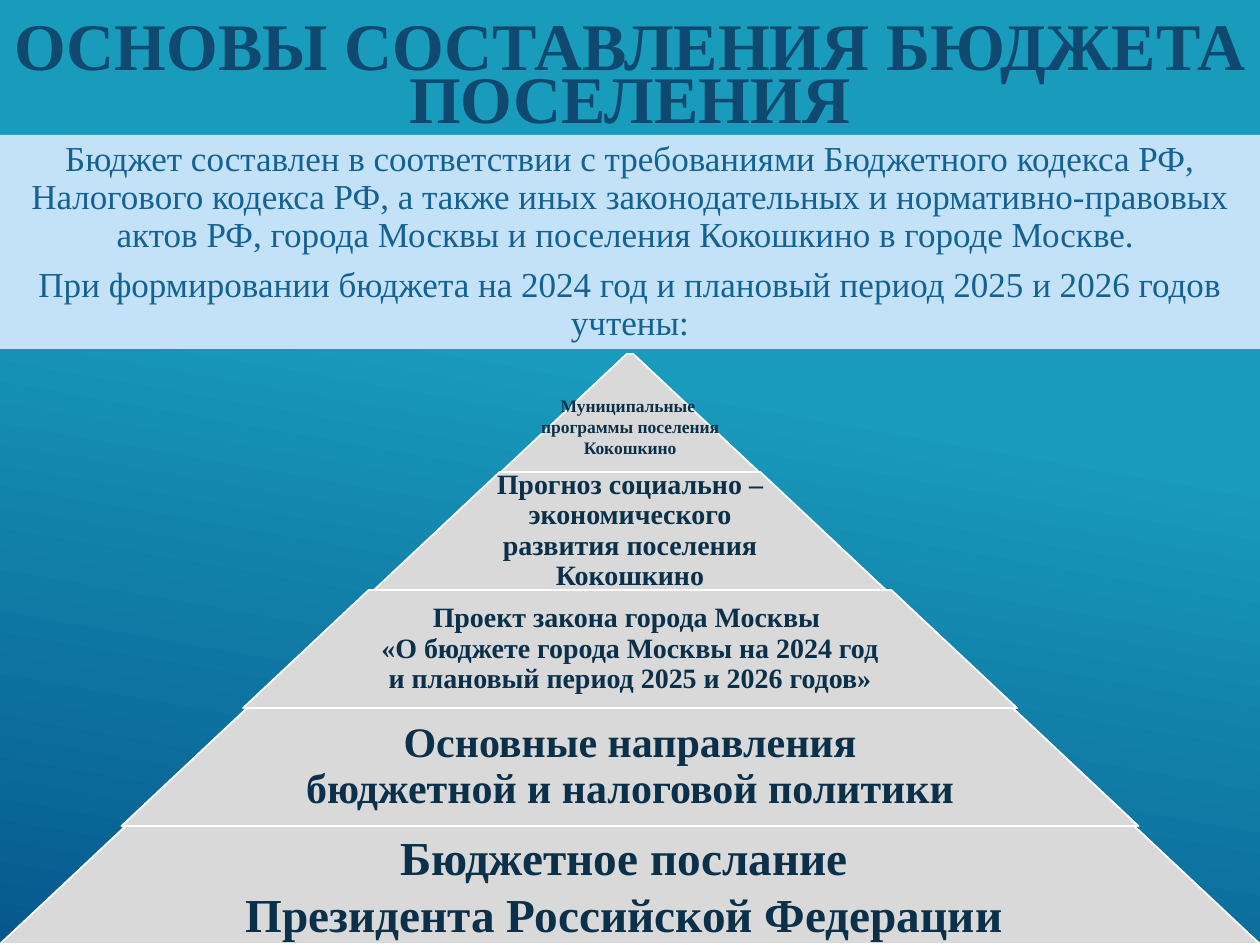
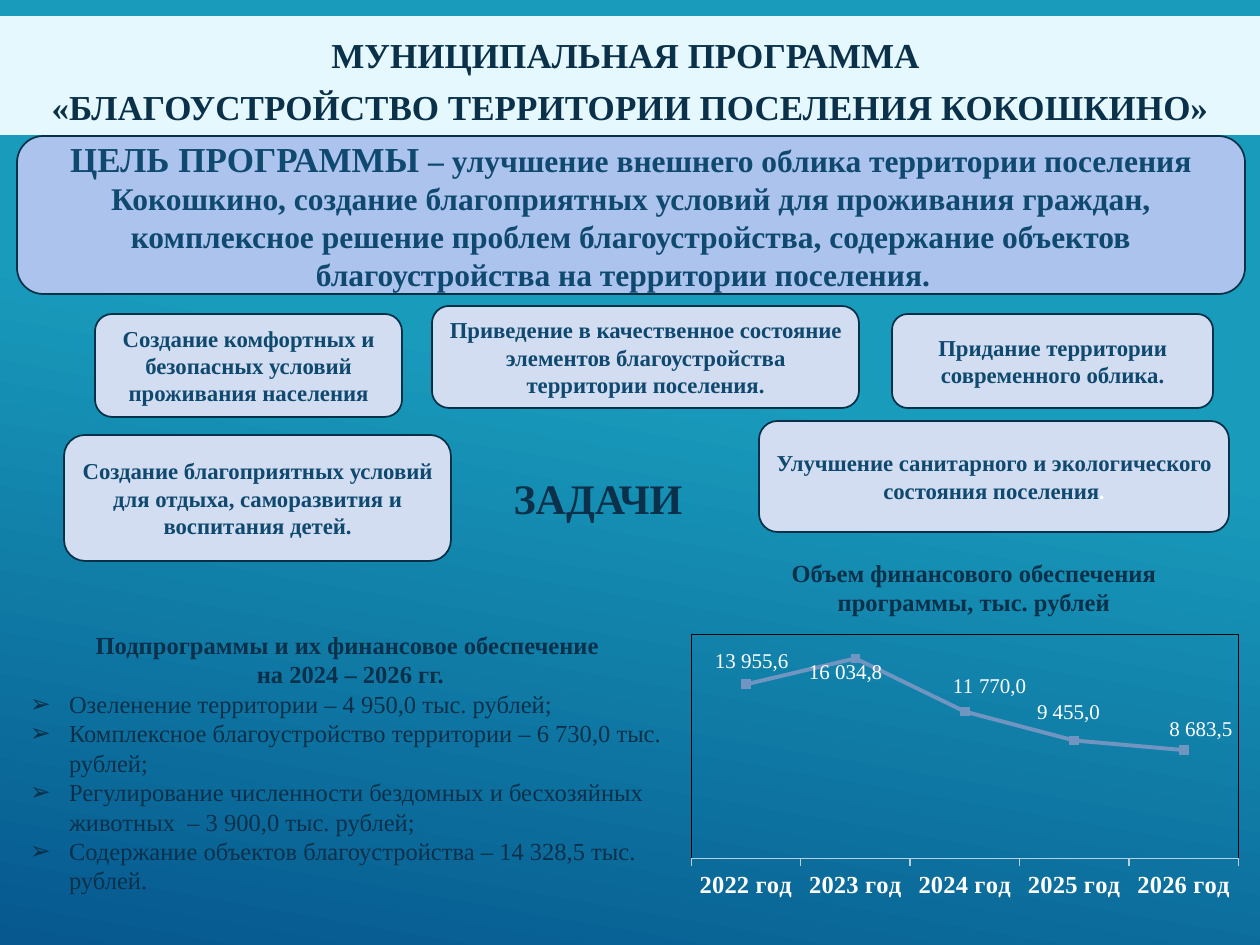
"""Build two slides on the budget of a settlement: its basis and one programme."""
import pptx
import pptx.chart.data
import pptx.dml.color
import pptx.enum.chart
import pptx.enum.shapes
import pptx.enum.text
import pptx.oxml
import pptx.oxml.ns
import pptx.util

FONT = "Times New Roman"
SKY, DEEP, NAVY, INK, WHITE = "199BBC", "06588E", "0A304A", "0F496F", "FFFFFF"
OUTLINE, CARD, SERIES = "043148", "D3DDF1", "7195C1"
PAGE_W, PAGE_H = 1260, 945
TITLE_TOP = 16
SNUG = (12, 6, 12, 6)

BASIS_TITLE = "ОСНОВЫ СОСТАВЛЕНИЯ БЮДЖЕТА\nПОСЕЛЕНИЯ"
INTRO = [
    "Бюджет составлен в соответствии с требованиями Бюджетного кодекса РФ, Налогового кодекса РФ, "
    "а также иных законодательных и нормативно-правовых актов РФ, города Москвы и поселения "
    "Кокошкино в городе Москве. ",
    "При формировании бюджета на 2024 год и плановый период 2025 и 2026 годов учтены:",
]
TIER_TOP, TIER_STEP = 354, 118
TIERS = [
    {"width": 258, "text_width": 258, "size": 10, "spacing": 1, "drop": 27,
     "text": ["Муниципальные ", "программы поселения Кокошкино"]},
    {"width": 512, "text_width": 318, "size": 16, "spacing": 0.9, "drop": 0,
     "text": ["Прогноз социально – экономического развития поселения Кокошкино"]},
    {"width": 774, "text_width": 503, "size": 16, "spacing": 0.9, "drop": 0,
     "text": ["Проект закона города Москвы ",
              "«О бюджете города Москвы на 2024 год и плановый период 2025 и 2026 годов»"]},
    {"width": 1017, "text_width": 662, "size": 24, "spacing": 0.9, "drop": 0,
     "text": ["Основные направления бюджетной и налоговой политики"]},
    {"width": 1260, "text_width": 819, "size": 27, "spacing": 1, "drop": 0,
     "text": ["Бюджетное послание ", "Президента Российской Федерации "]},
]

PROGRAMME_TITLE = ("МУНИЦИПАЛЬНАЯ ПРОГРАММА \n"
                   "«БЛАГОУСТРОЙСТВО ТЕРРИТОРИИ ПОСЕЛЕНИЯ КОКОШКИНО»")
GOAL = [
    ("ЦЕЛЬ ПРОГРАММЫ ", {"size": 20}),
    ("– улучшение внешнего облика территории поселения Кокошкино, создание благоприятных условий "
     "для проживания граждан, комплексное решение проблем благоустройства, содержание объектов "
     "благоустройства на территории поселения.  ", {}),
]
TASKS = [
    ((95, 314, 307, 103), "Создание комфортных и безопасных условий проживания населения"),
    ((892, 314, 321, 94), "Придание территории современного облика."),
    ((759, 421, 470, 111), [("Улучшение санитарного и экологического состояния поселения", {}),
                            (".", {"color": WHITE})]),
    ((64, 435, 387, 126), "Создание благоприятных условий для отдыха, саморазвития и воспитания детей."),
    ((432, 306, 427, 102), "Приведение в качественное состояние элементов благоустройства "
                           "территории поселения."),
]
TASKS_LABEL = "ЗАДАЧИ"
SUBPROGRAMME_HEAD = ["Подпрограммы и их финансовое обеспечение ", "на 2024 – 2026 гг."]
SUBPROGRAMMES = [
    "Озеленение территории – 4 950,0 тыс. рублей;",
    "Комплексное благоустройство территории – 6 730,0 тыс. рублей;",
    "Регулирование численности бездомных и бесхозяйных животных  – 3 900,0 тыс. рублей;",
    "Содержание объектов благоустройства – 14 328,5 тыс. рублей.",
]
CHART_TITLE = "Объем финансового обеспечения программы, тыс. рублей"
CHART_PLACE = (670, 564, 576, 364)
FUNDING = [
    ("2022 год", 13955.6, "13 955,6", "ABOVE", (6, -3)),
    ("2023 год", 16034.8, "16 034,8", "BELOW", (-10, -7)),
    ("2024 год", 11770, "11 770,0", "ABOVE", (25, -5)),
    ("2025 год", 9455, "9 455,0", "ABOVE", (-6, -8)),
    ("2026 год", 8683.5, "8 683,5", "ABOVE", (17, 0)),
]


def px(length):
    return pptx.util.Emu(round(length * 914400 / 126))


def rgb(color):
    return pptx.dml.color.RGBColor.from_string(color)


def style_font(font, size, color, bold):
    font.name, font.size, font.bold = FONT, pptx.util.Pt(size), bold
    font.color.rgb = rgb(color)


def write(frame, text, size=14, color=NAVY, bold=True, centred=True, spacing=1, after=0,
          bullet=None, more=False):
    """Put paragraphs, each a string or a list of (text, overrides), into a frame."""
    for index, content in enumerate(text):
        para = frame.add_paragraph() if more or index else frame.paragraphs[0]
        para.alignment = pptx.enum.text.PP_ALIGN.CENTER if centred else pptx.enum.text.PP_ALIGN.LEFT
        para.line_spacing = spacing
        para.space_before = pptx.util.Pt(0)
        para.space_after = pptx.util.Pt(after)
        set_bullet(para, bullet)
        spans = [(content, {})] if isinstance(content, str) else content
        for words, changes in spans:
            for number, line in enumerate(words.split("\n")):
                if number:
                    para.add_line_break()
                span = para.add_run()
                span.text = line
                style_font(span.font, **{"size": size, "color": color, "bold": bold, **changes})


def set_bullet(para, bullet):
    properties = para._p.get_or_add_pPr()
    indent = px(39) if bullet else 0
    properties.set("marL", str(indent))
    properties.set("indent", str(-indent))
    tag = f'buChar char="{bullet}"' if bullet else "buNone"
    properties.append(pptx.oxml.parse_xml(f'<a:{tag} {pptx.oxml.ns.nsdecls("a")}/>'))


def prepare_frame(box, anchor="MIDDLE", inset=(13, 6, 13, 6)):
    frame = box.text_frame
    frame.word_wrap = True
    frame.auto_size = pptx.enum.text.MSO_AUTO_SIZE.NONE
    frame.vertical_anchor = pptx.enum.text.MSO_ANCHOR[anchor]
    frame.margin_left, frame.margin_top, frame.margin_right, frame.margin_bottom = map(px, inset)
    return frame


def move(box, place):
    box.left, box.top, box.width, box.height = map(px, place)


def paint(box, fill):
    box.fill.solid()
    box.fill.fore_color.rgb = rgb(fill)


def add_text(page, place, text, anchor="MIDDLE", inset=(13, 6, 13, 6), **style):
    box = page.shapes.add_textbox(*map(px, place))
    write(prepare_frame(box, anchor, inset), text, **style)
    return box


def add_panel(page, kind, place, fill, line):
    box = page.shapes.add_shape(pptx.enum.shapes.MSO_SHAPE[kind], *map(px, place))
    box.shadow.inherit = False
    paint(box, fill)
    box.line.color.rgb = rgb(line)
    box.line.width = pptx.util.Pt(1)
    return box


def add_page(deck, layout, title, height, **style):
    page = deck.slides.add_slide(deck.slide_layouts[layout])
    fill = page.background.fill
    fill.gradient()
    fill.gradient_angle = 260
    for stop, (position, color) in zip(fill.gradient_stops, [(0.41, SKY), (1, DEEP)]):
        stop.position = position
        stop.color.rgb = rgb(color)
    move(page.shapes.title, (0, TITLE_TOP, PAGE_W, height))
    frame = prepare_frame(page.shapes.title, inset=(0, 6, 0, 6))
    write(frame, [title], spacing=pptx.util.Pt(30), **style)
    return page


def build_basis(deck):
    page = add_page(deck, 5, BASIS_TITLE, 136, size=38, color=INK)
    intro = add_text(page, (0, 135, PAGE_W, 214), INTRO, inset=(10,) * 4, size=20,
                     color="146194", bold=False, spacing=0.9, after=7)
    paint(intro, "C3E2F7")
    for index, tier in enumerate(TIERS):
        top = TIER_TOP + index * TIER_STEP
        left = (PAGE_W - tier["width"]) / 2
        box = add_panel(page, "TRAPEZOID", (left, top, tier["width"], TIER_STEP), "D9D9D9", WHITE)
        box.adjustments[0] = 1.065
        text_left = (PAGE_W - tier["text_width"]) / 2
        add_text(page, (text_left, top, tier["text_width"], TIER_STEP), tier["text"],
                 inset=(3, 3 + tier["drop"], 3, 3), size=tier["size"], spacing=tier["spacing"])


def manual_layout(x, y, size=""):
    mode = '<c:xMode val="edge"/><c:yMode val="edge"/>' if size else ""
    target = '<c:layoutTarget val="inner"/>' if size else ""
    return pptx.oxml.parse_xml(
        f'<c:layout {pptx.oxml.ns.nsdecls("c")}><c:manualLayout>{target}{mode}'
        f'<c:x val="{x:.3f}"/><c:y val="{y:.3f}"/>{size}</c:manualLayout></c:layout>')


def add_funding_chart(page):
    data = pptx.chart.data.CategoryChartData(number_format="0.0")
    data.categories = [row[0] for row in FUNDING]
    data.add_series("Series 1", [row[1] for row in FUNDING])
    kind = pptx.enum.chart.XL_CHART_TYPE.LINE_MARKERS
    chart = page.shapes.add_chart(kind, *map(px, CHART_PLACE), data).chart
    chart.has_legend = chart.has_title = False
    style_font(chart.font, 12, WHITE, False)

    values, years = chart.value_axis, chart.category_axis
    values.visible = values.has_major_gridlines = False
    values.minimum_scale, values.maximum_scale = 0, 18000
    years.major_tick_mark = pptx.enum.chart.XL_TICK_MARK.OUTSIDE
    years.format.line.color.rgb = rgb("B8D0E0")
    style_font(years.tick_labels.font, 14, WHITE, True)

    plot = chart.plots[0]
    plot.vary_by_categories = False
    series = plot.series[0]
    series.smooth = False
    series.format.line.color.rgb = rgb(SERIES)
    series.format.line.width = pptx.util.Pt(2.25)
    series.marker.style = pptx.enum.chart.XL_MARKER_STYLE.SQUARE
    series.marker.size = 5
    paint(series.marker.format, SERIES)
    series.marker.format.line.color.rgb = rgb(SERIES)

    labels = series.data_labels
    labels.show_value = True
    labels.number_format, labels.number_format_is_linked = "0.0", False
    for index, (_, _, caption, side, (dx, dy)) in enumerate(FUNDING):
        label = series.points[index].data_label
        write(label.text_frame, [caption], size=12, color=WHITE, bold=False)
        label.position = pptx.enum.chart.XL_LABEL_POSITION[side]
        element = labels._element.findall(pptx.oxml.ns.qn("c:dLbl"))[index]
        element.insert(1, manual_layout(dx / CHART_PLACE[2], dy / CHART_PLACE[3]))
    for leader in labels._element.findall(pptx.oxml.ns.qn("c:showLeaderLines")):
        leader.set("val", "0")

    area = chart._chartSpace.chart.plotArea
    for old in area.findall(pptx.oxml.ns.qn("c:layout")):
        area.remove(old)
    area.insert(0, manual_layout(0.037, 0.192, '<c:w val="0.95"/><c:h val="0.617"/>'))
    area.append(pptx.oxml.parse_xml(
        f'<c:spPr {pptx.oxml.ns.nsdecls("c", "a")}><a:noFill/><a:ln w="3175"><a:solidFill>'
        '<a:srgbClr val="000000"/></a:solidFill></a:ln></c:spPr>'))


def build_programme(deck):
    page = add_page(deck, 1, PROGRAMME_TITLE, 119, size=20)
    paint(page.shapes.title, "E4F8FD")
    goal = add_panel(page, "ROUNDED_RECTANGLE", (17, 136, 1228, 158), "ABC3ED", OUTLINE)
    write(prepare_frame(goal), [GOAL], size=18, color=INK)
    for place, text in TASKS:
        card = add_panel(page, "ROUNDED_RECTANGLE", place, CARD, OUTLINE)
        write(prepare_frame(card, inset=SNUG), [text], size=13, color=INK)
    add_text(page, (500, 467, 196, 63), [TASKS_LABEL], anchor="TOP", inset=SNUG, size=24)
    add_funding_chart(page)
    add_text(page, (746, 552, 456, 72), [CHART_TITLE], anchor="TOP")
    body = page.placeholders[1]
    move(body, (17, 624, 667, 280))
    frame = prepare_frame(body, "TOP")
    write(frame, SUBPROGRAMME_HEAD)
    write(frame, SUBPROGRAMMES, bold=False, centred=False, bullet="➢", more=True)


def main():
    deck = pptx.Presentation()
    deck.slide_width, deck.slide_height = px(PAGE_W), px(PAGE_H)
    build_basis(deck)
    build_programme(deck)
    deck.save("out.pptx")


if __name__ == "__main__":
    main()
